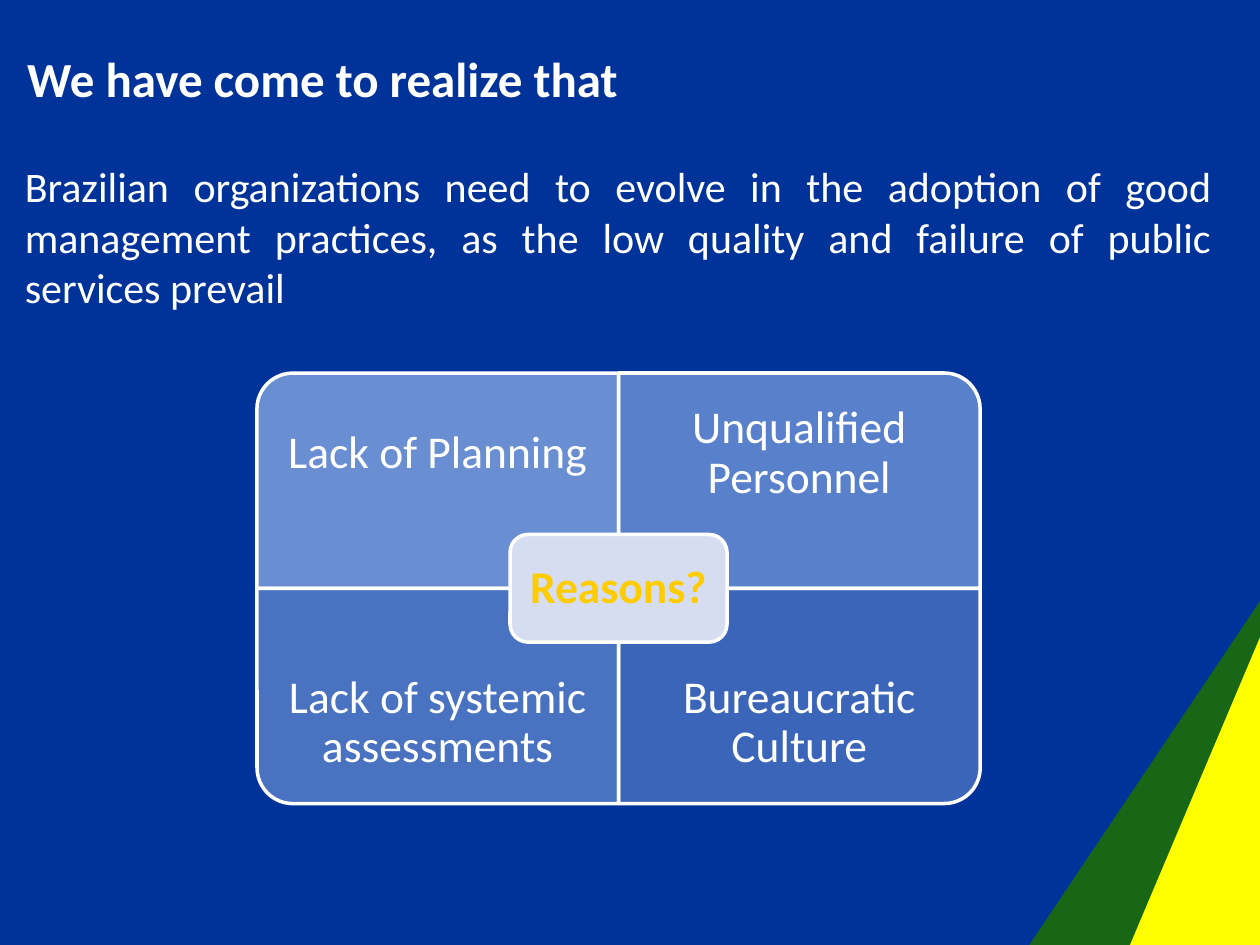
from pptx import Presentation
from pptx.dml.color import RGBColor
from pptx.enum import shapes, text
from pptx.oxml.ns import qn
from pptx.util import Cm, Pt
from lxml import etree

COLORS = {
    "navy": "003399",
    "green": "176717",
    "yellow": "FFFF00",
    "white": "FFFFFF",
    "blue": "7598D9",
    "pale": "D6DDF1",
    "gold": "FFCC00",
}
WIDTH, HEIGHT = 25.4, 19.05
GRID_LEFT, GRID_TOP = 5.18, 7.52
CELL_WIDTH, CELL_HEIGHT = 7.29, 4.34
LABEL_HEIGHT = CELL_HEIGHT * 0.75
REASONS = [
    ("Lack of Planning", 0, 0, 270, 90),
    ("Unqualified Personnel", 1, 0, 0, 77),
    ("Lack of systemic assessments", 0, 1, 180, 63),
    ("Bureaucratic Culture", 1, 1, 90, 50),
]


def color(name):
    return RGBColor.from_string(COLORS[name])


def write(box, content, size=26, bold=False, tint="white", align="CENTER",
          anchor="MIDDLE", inset=None, spacing=None):
    frame = box.text_frame
    frame.word_wrap = True
    frame.vertical_anchor = text.MSO_ANCHOR[anchor]
    if inset is not None:
        frame.margin_left = frame.margin_right = Cm(inset)
        frame.margin_top = frame.margin_bottom = Cm(inset)
    para = frame.paragraphs[0]
    para.alignment = text.PP_ALIGN[align]
    if spacing:
        para.line_spacing = spacing
    span = para.add_run()
    span.text = content
    span.font.name = "Calibri"
    span.font.size = Pt(size)
    span.font.bold = bold
    span.font.color.rgb = color(tint)


class SlideBuilder:
    def __init__(self, deck):
        self.page = deck.slides.add_slide(deck.slide_layouts[6])
        self.page.background.fill.solid()
        self.page.background.fill.fore_color.rgb = color("navy")

    def paint(self, shape, fill, outline=None, opacity=100):
        shape.shadow.inherit = False
        shape.fill.solid()
        shape.fill.fore_color.rgb = color(fill)
        if opacity < 100:
            tone = shape.fill._xPr.find(qn("a:solidFill"))[0]
            etree.SubElement(tone, qn("a:alpha"), val=str(opacity * 1000))
        if outline:
            shape.line.color.rgb = color(outline)
            shape.line.width = Pt(2)
        else:
            shape.line.fill.background()

    def polygon(self, points, fill):
        corners = [(Cm(x), Cm(y)) for x, y in points]
        builder = self.page.shapes.build_freeform(*corners[0], scale=1.0)
        builder.add_line_segments(corners[1:], close=True)
        self.paint(builder.convert_to_shape(), fill)

    def label(self, content, left, top, width, height, **style):
        box = self.page.shapes.add_textbox(Cm(left), Cm(top), Cm(width), Cm(height))
        write(box, content, **style)

    def panel(self, kind, center_x, center_y, width, height, fill, rotation=0, opacity=100):
        if rotation in (90, 270):
            width, height = height, width
        shape = self.page.shapes.add_shape(
            shapes.MSO_SHAPE[kind], Cm(center_x - width / 2), Cm(center_y - height / 2),
            Cm(width), Cm(height))
        shape.rotation = rotation
        self.paint(shape, fill, "white", opacity)
        return shape


def main():
    deck = Presentation()
    deck.slide_width, deck.slide_height = Cm(WIDTH), Cm(HEIGHT)
    slide = SlideBuilder(deck)

    slide.polygon([(20.75, HEIGHT), (WIDTH, 12.12), (WIDTH, HEIGHT)], "green")
    slide.polygon([(22.78, HEIGHT), (WIDTH, 12.85), (WIDTH, HEIGHT)], "yellow")

    slide.label("We have come to realize that", 0.3, 0.81, 23.6, 1.52,
                size=28, bold=True, align="LEFT")
    slide.label("Brazilian organizations need to evolve in the adoption of good "
                "management practices, as the low quality and failure of public "
                "services prevail", 0.25, 3.12, 24.43, 3.33,
                size=24, align="JUSTIFY", anchor="TOP")

    for reason, column, row, rotation, opacity in REASONS:
        left = GRID_LEFT + column * CELL_WIDTH
        top = GRID_TOP + row * CELL_HEIGHT
        slide.panel("ROUND_1_RECTANGLE", left + CELL_WIDTH / 2, top + CELL_HEIGHT / 2,
                    CELL_WIDTH, CELL_HEIGHT, "blue", rotation, opacity)
        slide.label(reason, left, top + row * (CELL_HEIGHT - LABEL_HEIGHT),
                    CELL_WIDTH, LABEL_HEIGHT, inset=0.51, spacing=0.9)

    hub = slide.panel("ROUNDED_RECTANGLE", GRID_LEFT + CELL_WIDTH, GRID_TOP + CELL_HEIGHT,
                      CELL_WIDTH * 0.6, CELL_HEIGHT / 2, "pale")
    write(hub, "Reasons?", bold=True, tint="gold", inset=0.28, spacing=0.9)

    deck.save("out.pptx")


if __name__ == "__main__":
    main()
